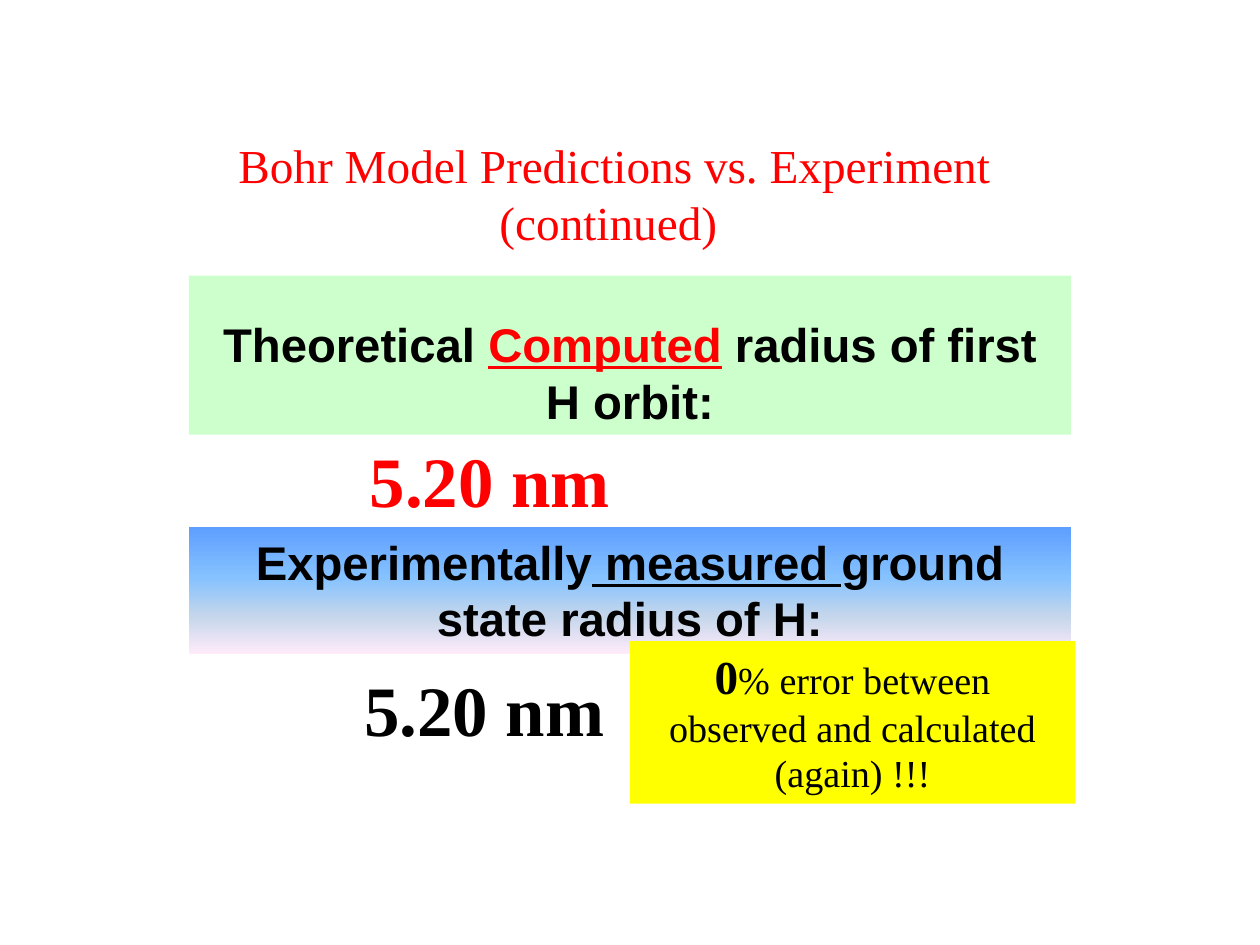
from copy import deepcopy
from dataclasses import dataclass

from pptx import Presentation
from pptx import util as u
from pptx.dml.color import RGBColor
from pptx.enum import shapes, text
from pptx.oxml.ns import qn

BLACK, RED = "000000", "FF0000"
SANS, SERIF = "Arial", "Times New Roman"
SKY_GRADIENT = [(0, "5E9EFF"), (0.4, "85C2FF"), (0.7, "C4D6EB"), (1, "FFEBFA")]


@dataclass
class Run:
    content: str
    size: float = 27
    font: str = SANS
    color: str = BLACK
    bold: bool = True
    underline: bool = False


@dataclass
class Panel:
    left: float
    top: float
    width: float
    height: float
    runs: list[Run]
    fill: str | list[tuple[float, str]] | None = None
    anchor: text.MSO_ANCHOR = text.MSO_ANCHOR.TOP


def hex_color(value: str) -> RGBColor:
    return RGBColor.from_string(value)


def add_run(paragraph, content: str, *, size: float, font: str, color: str,
            bold: bool, underline: bool) -> None:
    run = paragraph.add_run()
    run.text = content
    run.font.size = u.Pt(size)
    run.font.name = font
    run.font.bold = bold
    run.font.underline = underline
    run.font.color.rgb = hex_color(color)


def fill_gradient(shape, stops: list[tuple[float, str]]) -> None:
    shape.fill.gradient()
    shape.fill.gradient_angle = 270
    stop_list = next(shape.element.iter(qn("a:gsLst")))
    for _ in stops[2:]:
        stop_list.append(deepcopy(stop_list[0]))
    for stop, (position, color) in zip(shape.fill.gradient_stops, stops):
        stop.position = position
        stop.color.rgb = hex_color(color)


def draw_panel(slide, panel: Panel) -> None:
    box = [u.Pt(length) for length in (panel.left, panel.top, panel.width, panel.height)]
    if panel.fill is None:
        shape = slide.shapes.add_textbox(*box)
    else:
        shape = slide.shapes.add_shape(shapes.MSO_SHAPE.RECTANGLE, *box)
        shape.shadow.inherit = False
        shape.line.fill.background()
        if isinstance(panel.fill, str):
            shape.fill.solid()
            shape.fill.fore_color.rgb = hex_color(panel.fill)
        else:
            fill_gradient(shape, panel.fill)
    frame = shape.text_frame
    frame.word_wrap = True
    frame.vertical_anchor = panel.anchor
    paragraph = frame.paragraphs[0]
    paragraph.alignment = text.PP_ALIGN.CENTER
    for run in panel.runs:
        add_run(paragraph, run.content, size=run.size, font=run.font,
                color=run.color, bold=run.bold, underline=run.underline)


def radius_value(color: str) -> list[Run]:
    return [Run("5.20 nm", size=40.5, font=SERIF, color=color)]


PANELS = [
    Panel(108, 157.5, 504, 91, [
        Run("Theoretical "),
        Run("Computed", color=RED, underline=True),
        Run(" radius of first H orbit:"),
    ], fill="CCFFCC", anchor=text.MSO_ANCHOR.BOTTOM),
    Panel(90, 76.5, 522, 67.5, [
        Run("Bohr Model Predictions vs. Experiment (continued) ",
            font=SERIF, color=RED, bold=False),
    ], anchor=text.MSO_ANCHOR.MIDDLE),
    Panel(108, 301, 504, 72.7, [
        Run("Experimentally"),
        Run(" measured ", underline=True),
        Run("ground state radius of H:"),
    ], fill=SKY_GRADIENT),
    Panel(192, 246, 176, 56, radius_value(RED)),
    Panel(184.5, 377, 184.5, 56, radius_value(BLACK)),
    Panel(360, 366.3, 254.5, 93, [
        Run("0", font=SERIF),
        Run("% error between observed and calculated (again) !!!",
            size=21.8, font=SERIF, bold=False),
    ], fill="FFFF00"),
]


def main() -> None:
    presentation = Presentation()
    presentation.slide_width, presentation.slide_height = u.Pt(720), u.Pt(540)
    slide = presentation.slides.add_slide(presentation.slide_layouts[6])
    for panel in PANELS:
        draw_panel(slide, panel)
    presentation.save("out.pptx")


if __name__ == "__main__":
    main()
